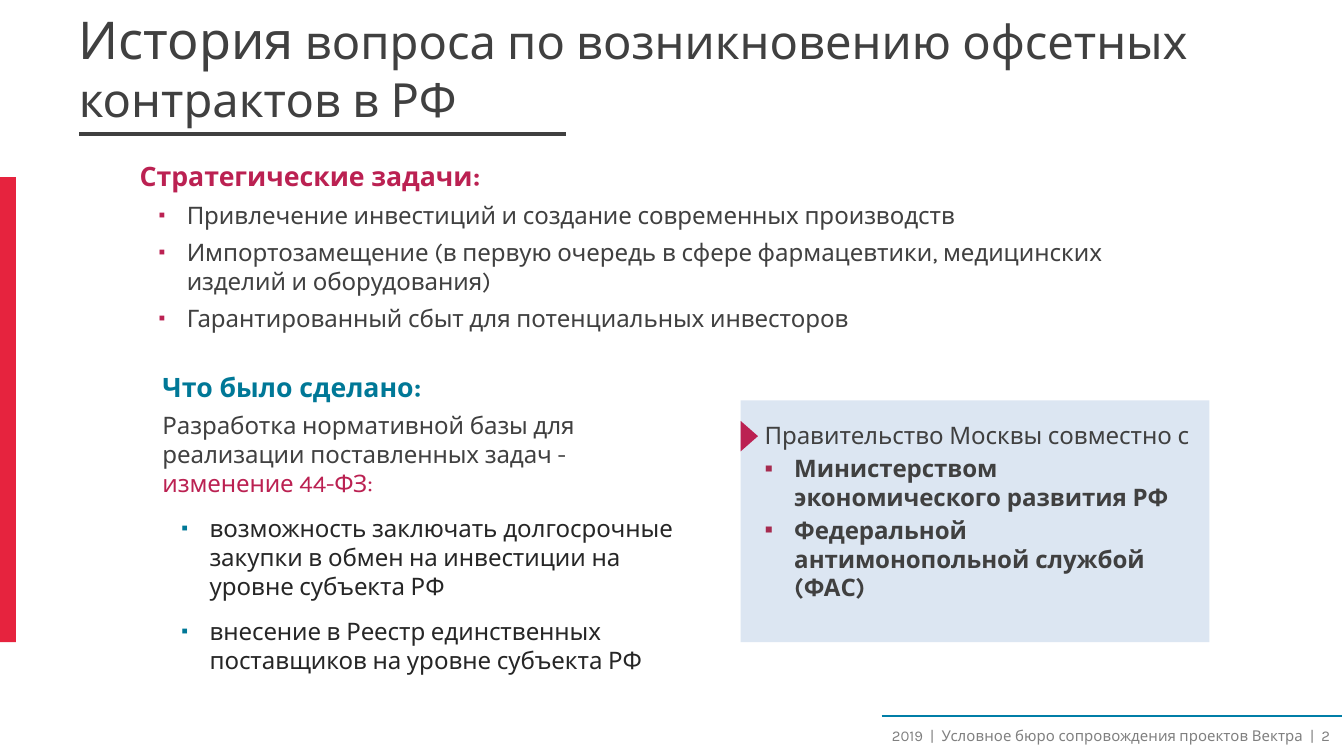
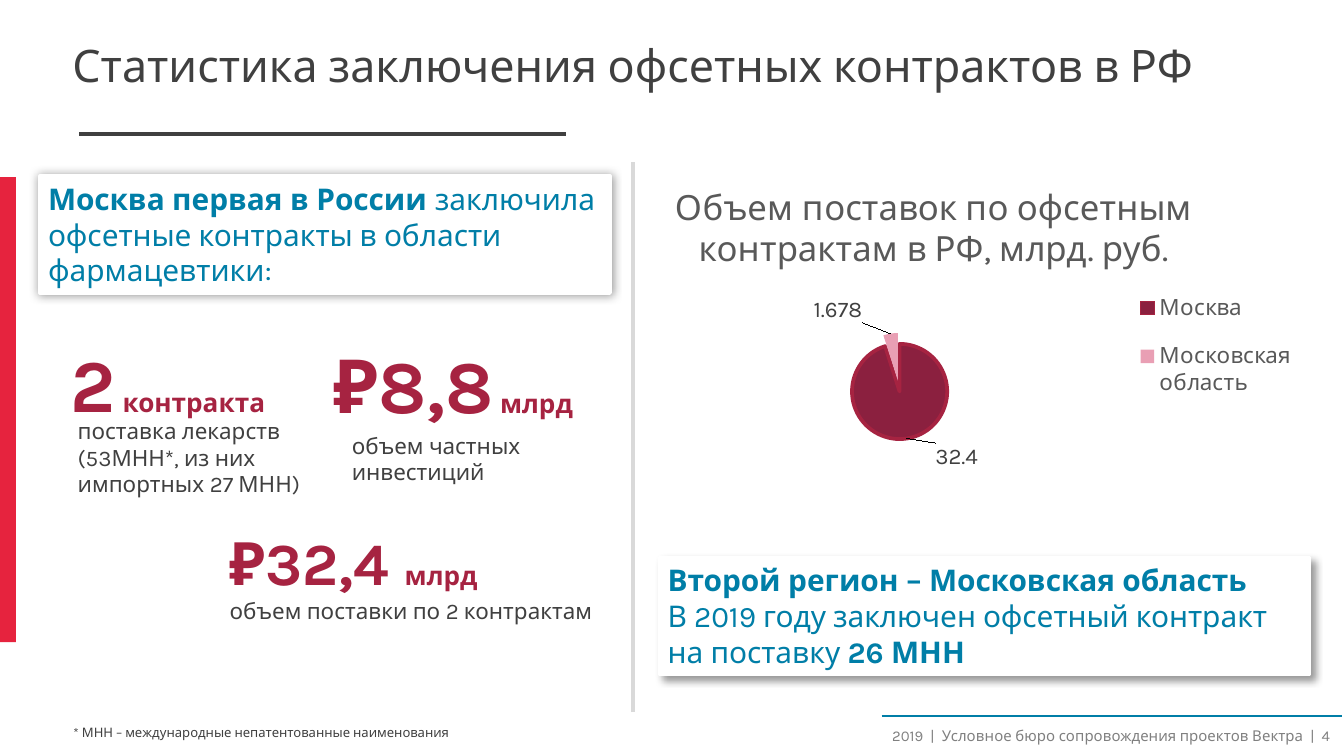
from lxml import etree
from pptx import Presentation
from pptx import util as u
from pptx.chart.data import CategoryChartData
from pptx.dml.color import RGBColor
from pptx.enum import chart as ch, shapes, text
from pptx.oxml import parse_xml
from pptx.oxml.ns import nsdecls, qn

FONT = "Karla"
C = dict(dark="404040", ink="262626", grey="808080", soft="595959", rule="D9D9D9",
         red="E6233E", berry="BB2152", wine="A62B4F", ruby="A62341", teal="007897",
         blue="007EA7", pale="DCE6F2", white="FFFFFF", moscow="8B203F", region="E99FB4",
         black="000000")
INSETS = (0.15, 0.08)
WIDE_INSETS = (0.25, 0.13)
PUBLISHER = "Условное бюро сопровождения проектов Вектра"


def para(*runs, before=0, after=0, bullet=None):
    """Runs are (text, size, colour, bold); a bullet is (colour, percent, left, hang)."""
    return dict(runs=runs, before=before, after=after, bullet=bullet)


def item(words, colour, before, after, bullet, bold=False):
    return para((words, 12.9, colour, bold), before=before, after=after, bullet=bullet)


BERRY_BULLET = ("berry", 80, 0.89, 0.53)
TEAL_BULLET = ("teal", 80, 0.89, 0.53)
WINE_BULLET = ("wine", 100, 0.56, 0.56)

HISTORY_TITLE = [para(("История", 27.9, "dark", False),
                      (" вопроса по возникновению офсетных контрактов в РФ", 25.2, "dark", False))]
GOALS = [para(("Стратегические задачи:", 14.3, "berry", True), after=4.3)] + [
    item(words, "dark", 0, 4.3, BERRY_BULLET) for words in (
        "Привлечение инвестиций и создание современных производств",
        "Импортозамещение (в первую очередь в сфере фармацевтики, медицинских изделий и оборудования)",
        "Гарантированный сбыт для потенциальных инвесторов")]
DONE = [
    para(("Что было сделано:", 14.3, "teal", True), after=4.3),
    para(("Разработка нормативной базы для реализации поставленных задач - ", 12.9, "dark", False),
         ("изменение 44-ФЗ:", 12.9, "berry", False), after=4.3)] + [
    item(words, "ink", 4.3, 4.3, TEAL_BULLET) for words in (
        "возможность заключать долгосрочные закупки в обмен на инвестиции на уровне субъекта РФ",
        "внесение в Реестр единственных поставщиков на уровне субъекта РФ")]
PARTNERS = [item("Правительство Москвы совместно с", "dark", 4.3, 0, None)] + [
    item(words, "dark", 2.1, 0, WINE_BULLET, True) for words in (
        "Министерством экономического развития РФ",
        "Федеральной антимонопольной службой (ФАС)")]
# layout placeholder index, box, paragraphs
HISTORY_LISTS = [
    (1, (2.49, 2.95, 18.97, 3.4), GOALS),
    (2, (2.92, 6.93, 10.34, 5.33), DONE),
    (3, (14.3, 7.87, 8.51, 3.05), PARTNERS),
]

STATS_TITLE = [para(("Статистика заключения офсетных контрактов в РФ", 24, "dark", False))]
# box, shadow (blur, distance, angle), paragraphs
CARDS = [
    ((0.76, 3.33, 10.77, 2.21), (5, 0, 0),
     [para(("Москва первая в России ", 16, "blue", True),
           ("заключила офсетные контракты в области фармацевтики:", 16, "blue", False))]),
    ((12.47, 10.54, 12.27, 2.21), (4, 3, 45),
     [para(("Второй регион – Московская область", 16, "blue", True)),
      para(("В 2019 году заключен офсетный контракт на поставку ", 16, "blue", False),
           ("26 МНН", 16, "blue", True))]),
]
FIGURES = [
    ((1.09, 6.25, 5.99, 1.96),
     [para(("2", 40, "ruby", True), (" контракта", 14, "ruby", True))]),
    ((1.22, 7.75, 5.26, 1.8),
     [para(("поставка лекарств", 12, "dark", False)),
      para(("(53МНН*, из них импортных 27 МНН)", 12, "dark", False))]),
    ((6.05, 6.27, 5.66, 1.96),
     [para(("₽8,8", 40, "ruby", True), (" млрд", 14, "ruby", True))]),
    ((6.4, 8.03, 5.56, 1.27), [para(("объем частных инвестиций", 12, "dark", False))]),
    ((1.14, 13.56, 10.8, 0.56),
     [para(("* МНН – международные непатентованные наименования", 7, "dark", False))]),
    ((4.09, 9.8, 7.95, 2.13),
     [para(("₽32,4 ", 32, "ruby", True), ("млрд", 14, "ruby", True)),
      para(("объем поставки по 2 контрактам", 12, "dark", False))]),
]
SUPPLY_TITLE = "Объем поставок по офсетным контрактам в РФ, млрд. руб."
# region, value, colour, label shift
SUPPLY = [("Москва", 32.4, "moscow", (0.04, -0.01)),
          ("Московская область", 1.678, "region", (-0.04, -0.01))]


def rgb(name):
    return RGBColor.from_string(C[name])


def cm(values):
    return [u.Cm(v) for v in values]


def place(sp, box):
    sp.left, sp.top, sp.width, sp.height = cm(box)


def style(font, size, colour, bold=False):
    font.name, font.size, font.bold = FONT, u.Pt(size), bold
    font.color.rgb = rgb(colour)


def set_bullet(p, bullet):
    pPr = p._p.get_or_add_pPr()
    colour, percent, left, hang = bullet or (None, 0, 0, 0)
    pPr.set("marL", str(u.Cm(left)))
    pPr.set("indent", str(-u.Cm(hang)))
    if not bullet:
        etree.SubElement(pPr, qn("a:buNone"))
        return
    clr = etree.SubElement(pPr, qn("a:buClr"))
    etree.SubElement(clr, qn("a:srgbClr"), val=C[colour])
    etree.SubElement(pPr, qn("a:buSzPct"), val=str(percent * 1000))
    etree.SubElement(pPr, qn("a:buChar"), char="▪")


def write(sp, paras, insets=WIDE_INSETS, anchor=text.MSO_ANCHOR.TOP, align=text.PP_ALIGN.LEFT):
    tf = sp.text_frame
    tf.word_wrap, tf.auto_size, tf.vertical_anchor = True, text.MSO_AUTO_SIZE.NONE, anchor
    tf.margin_left = tf.margin_right = u.Cm(insets[0])
    tf.margin_top = tf.margin_bottom = u.Cm(insets[1])
    for i, content in enumerate(paras):
        p = tf.add_paragraph() if i else tf.paragraphs[0]
        p.alignment = align
        p.space_before, p.space_after = u.Pt(content["before"]), u.Pt(content["after"])
        set_bullet(p, content["bullet"])
        for words, *look in content["runs"]:
            r = p.add_run()
            r.text = words
            style(r.font, *look)


def add_text(s, box, paras, **options):
    write(s.shapes.add_textbox(*cm(box)), paras, **options)


def add_shape(s, kind, box, fill):
    sp = s.shapes.add_shape(kind, *cm(box))
    sp.shadow.inherit = False
    sp.fill.solid()
    sp.fill.fore_color.rgb = rgb(fill)
    sp.line.fill.background()
    return sp


def add_line(s, ends, colour, width):
    line = s.shapes.add_connector(shapes.MSO_CONNECTOR.STRAIGHT, *cm(ends))
    line.line.color.rgb, line.line.width = rgb(colour), u.Pt(width)
    etree.SubElement(line._element.spPr, qn("a:effectLst"))


def add_card(s, box, shadow, paras):
    sp = add_shape(s, shapes.MSO_SHAPE.RECTANGLE, box, "white")
    sp.line.color.rgb, sp.line.width = rgb("white"), u.Pt(2)
    blur, dist, angle = shadow
    effects = sp._element.spPr.find(qn("a:effectLst"))
    outer = etree.SubElement(effects, qn("a:outerShdw"), blurRad=str(u.Pt(blur)),
                             dist=str(u.Pt(dist)), dir=str(angle * 60000), rotWithShape="0")
    clr = etree.SubElement(outer, qn("a:srgbClr"), val=C["black"])
    etree.SubElement(clr, qn("a:alpha"), val="40000")
    write(sp, paras, INSETS)


def new_slide(prs, layout, number, title, title_box):
    """Add a slide with the title, rule, side bar and footer that all slides share."""
    s = prs.slides.add_slide(prs.slide_layouts[layout])
    add_line(s, (1.5, 2.54, 10.69, 2.54), "dark", 2.25)
    add_shape(s, shapes.MSO_SHAPE.RECTANGLE, (0, 3.35, 0.3, 8.79), "red")
    footer = f"2019  |  {PUBLISHER}  |  {number}"
    add_text(s, (13.11, 13.49, 12.27, 0.84), [para((footer, 8, "grey", False))],
             insets=(0.23, 0.1), anchor=text.MSO_ANCHOR.MIDDLE, align=text.PP_ALIGN.RIGHT)
    add_line(s, (16.66, 13.54, 25.37, 13.54), "blue", 1)
    place(s.shapes.title, title_box)
    write(s.shapes.title, title, anchor=text.MSO_ANCHOR.MIDDLE)
    return s


def set_layout(parent, after=None, inner=False, **sizes):
    """Give a chart part a manual layout, placed after the named child."""
    for old in parent.findall(qn("c:layout")):
        parent.remove(old)
    layout = parse_xml(f"<c:layout {nsdecls('c')}><c:manualLayout/></c:layout>")
    manual = layout[0]
    if inner:
        etree.SubElement(manual, qn("c:layoutTarget"), val="inner")
    if after != "c:idx":
        for mode in ("xMode", "yMode"):
            etree.SubElement(manual, qn("c:" + mode), val="edge")
    for key, value in sizes.items():
        etree.SubElement(manual, qn("c:" + key), val=str(value))
    if after:
        parent.find(qn(after)).addnext(layout)
    else:
        parent.insert(0, layout)


def add_supply_chart(s, box):
    data = CategoryChartData()
    data.categories = [row[0] for row in SUPPLY]
    data.add_series("Series 1", [row[1] for row in SUPPLY])
    chart = s.shapes.add_chart(ch.XL_CHART_TYPE.PIE, *cm(box), data).chart
    style(chart.font, 10, "black")

    chart.has_title = True
    tf = chart.chart_title.text_frame
    tf.text = SUPPLY_TITLE
    style(tf.paragraphs[0].runs[0].font, 18.6, "soft")
    set_layout(chart.chart_title._element, "c:tx", x=0.04, y=0.05)

    chart.has_legend = True
    chart.legend.position = ch.XL_LEGEND_POSITION.RIGHT
    chart.legend.include_in_layout = False
    style(chart.legend.font, 12, "soft")
    set_layout(chart.legend._element, "c:legendPos", x=0.72, y=0.34, w=0.25, h=0.44)

    plot = chart.plots[0]
    plot.vary_by_categories = True
    set_layout(plot._element.getparent(), inner=True, x=0.31, y=0.55, w=0.14, h=0.3)
    series = plot.series[0]
    series.data_labels.show_value = True
    style(series.data_labels.font, 12, "dark")
    for i, (_, _, colour, (dx, dy)) in enumerate(SUPPLY):
        point = series.points[i]
        point.format.fill.solid()
        point.format.fill.fore_color.rgb = rgb(colour)
        label = point.data_label
        style(label.font, 12, "dark")
        label.position = ch.XL_LABEL_POSITION.OUTSIDE_END
        dLbl = series._element.find(qn("c:dLbls")).findall(qn("c:dLbl"))[i]
        set_layout(dLbl, "c:idx", x=dx, y=dy)
    edge = series.points[0].format.line
    edge.color.rgb, edge.width = rgb("ruby"), u.Pt(2)
    region = series._element.findall(qn("c:dPt"))[1]
    burst = parse_xml(f'<c:explosion {nsdecls("c")} val="23"/>')
    region.find(qn("c:spPr")).addprevious(burst)


def build_history(prs):
    s = new_slide(prs, 4, 2, HISTORY_TITLE, (1.24, 0, 22.66, 2.54))
    panel = add_shape(s, shapes.MSO_SHAPE.RECTANGLE, (14, 7.57, 8.86, 4.57), "pale")
    s.shapes._spTree.insert(2, panel._element)
    bodies = {sp.placeholder_format.idx: sp for sp in s.placeholders}
    for idx, box, paras in HISTORY_LISTS:
        place(bodies[idx], box)
        write(bodies[idx], paras, INSETS)
    spare = bodies[4]._element
    spare.getparent().remove(spare)
    marker = add_shape(s, shapes.MSO_SHAPE.ISOSCELES_TRIANGLE, (13.87, 8.08, 0.58, 0.33), "berry")
    marker.rotation = 90


def build_stats(prs):
    s = new_slide(prs, 5, 4, STATS_TITLE, (1.12, -0.05, 23.52, 2.54))
    add_line(s, (11.96, 13.46, 11.96, 3.07), "rule", 2.25)
    for box, paras in FIGURES:
        add_text(s, box, paras)
    add_supply_chart(s, (12.12, 3.05, 12.85, 6.22))
    for card in CARDS:
        add_card(s, *card)


def main():
    prs = Presentation()
    prs.slide_width, prs.slide_height = cm((25.4, 14.29))
    build_history(prs)
    build_stats(prs)
    prs.save("out.pptx")


if __name__ == "__main__":
    main()
